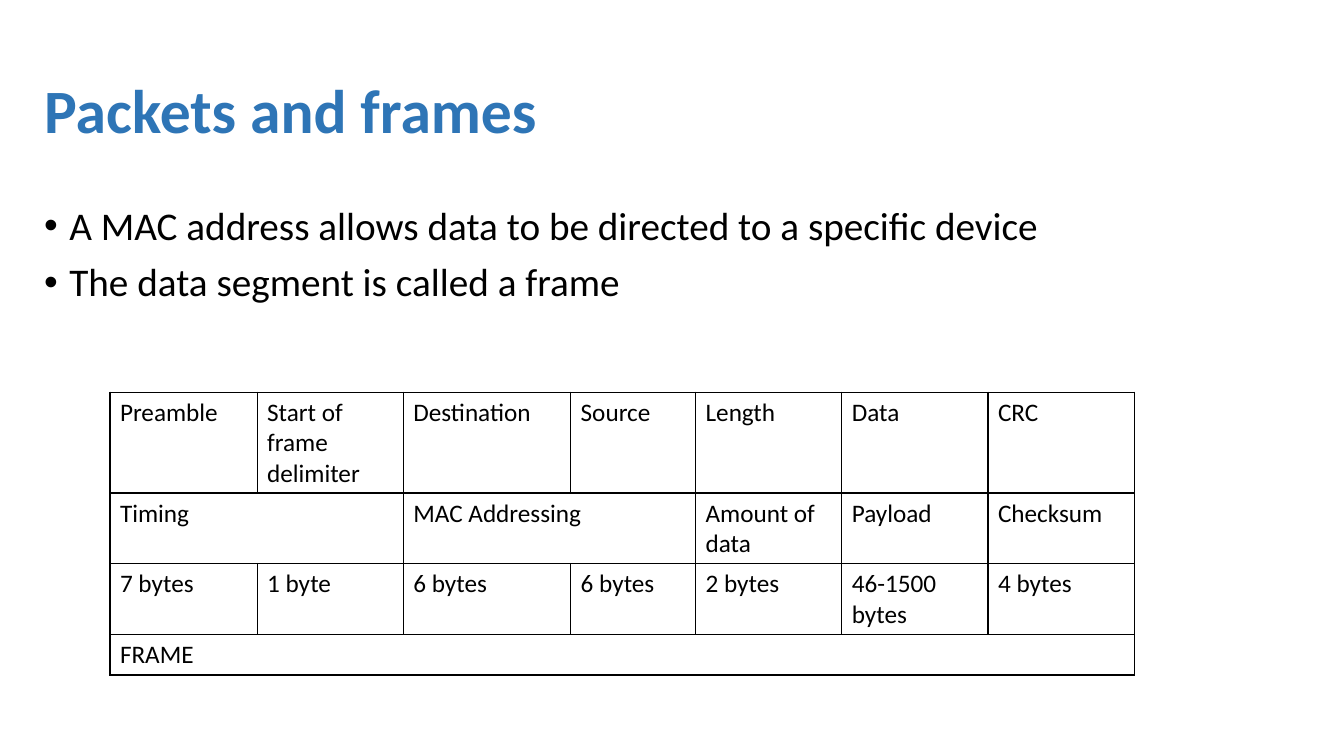
from lxml import etree
from pptx import Presentation
from pptx.dml.color import RGBColor
from pptx.enum.text import MSO_ANCHOR
from pptx.oxml.ns import qn
from pptx.util import Inches, Pt

MIDDLE = MSO_ANCHOR.MIDDLE
TOP = MSO_ANCHOR.TOP
WIDE, HIGH = Inches(13.33), Inches(7.5)
FONT = "Calibri"
BLACK, BLUE = "000000", "2E75B6"

LEFT, SPAN = 2.55, 95.12
COLS = [10.95, 10.88, 12.45, 9.3, 10.88, 10.88, 10.88]
ROW = 5.4
POINTS = [
    "A MAC address allows data to be directed to a specific device",
    "The data segment is called a frame",
]
FIELDS = [
    ["Preamble", "Start of frame delimiter", "Destination", "Source",
     "Length", "Data", "CRC"],
    ["Timing", None, "MAC Addressing", None,
     "Amount of data", "Payload", "Checksum"],
    ["7 bytes", "1 byte", "6 bytes", "6 bytes",
     "2 bytes", "46-1500 bytes", "4 bytes"],
    ["FRAME"] + [None] * 6,
]


def across(share):
    return round(WIDE * share / 100)


def down(share):
    return round(HIGH * share / 100)


def paint(font, code):
    font.color.rgb = RGBColor.from_string(code)


def style(para, size, code=BLACK, bold=False):
    for run in para.runs:
        run.font.name = FONT
        run.font.size = Pt(size)
        run.font.bold = bold
        paint(run.font, code)


def add_text(slide, top, height, lines, anchor=TOP):
    box = slide.shapes.add_textbox(
        across(LEFT), down(top), across(SPAN), down(height))
    frame = box.text_frame
    frame.word_wrap = True
    frame.vertical_anchor = anchor
    frame.text = "\n".join(lines)
    for para in frame.paragraphs:
        para.line_spacing = 0.9
    return frame.paragraphs


def add_bullet(para):
    props = para._p.get_or_add_pPr()
    props.set("marL", str(Inches(0.25)))
    props.set("indent", str(-Inches(0.25)))
    tint = etree.SubElement(props, qn("a:buClr"))
    etree.SubElement(tint, qn("a:srgbClr"), val=BLACK)
    etree.SubElement(props, qn("a:buFont"), typeface="Arial")
    etree.SubElement(props, qn("a:buChar"), char="•")


def add_rules(cell):
    props = cell._tc.get_or_add_tcPr()
    for side in "LRTB":
        line = etree.SubElement(props, qn("a:ln" + side), w=str(Pt(1)))
        fill = etree.SubElement(line, qn("a:solidFill"))
        etree.SubElement(fill, qn("a:srgbClr"), val=BLACK)


def merge_gaps(table, row, texts):
    start = 0
    for col in range(1, len(texts) + 1):
        if col == len(texts) or texts[col] is not None:
            if col - start > 1:
                table.cell(row, start).merge(table.cell(row, col - 1))
            start = col


def add_grid(slide, left, top, rows):
    table = slide.shapes.add_table(
        len(rows), len(COLS), across(left), down(top),
        across(sum(COLS)), down(ROW * len(rows))).table
    table.first_row = False
    table.horz_banding = False
    for col, share in zip(table.columns, COLS):
        col.width = across(share)
    for r, texts in enumerate(rows):
        table.rows[r].height = down(ROW)
        for c, text in enumerate(texts):
            cell = table.cell(r, c)
            add_rules(cell)
            cell.fill.background()
            if text is not None:
                cell.text_frame.text = text
                style(cell.text_frame.paragraphs[0], 18)
        merge_gaps(table, r, texts)


def main():
    deck = Presentation()
    deck.slide_width, deck.slide_height = WIDE, HIGH
    slide = deck.slides.add_slide(deck.slide_layouts[6])
    title = add_text(slide, 5.33, 19.33, ["Packets and frames"], MIDDLE)
    style(title[0], 44, BLUE, True)
    for i, para in enumerate(add_text(slide, 26.67, 72, POINTS)):
        para.space_before = Pt(10 if i else 0)
        add_bullet(para)
        style(para, 28)
    add_grid(slide, 8.18, 51.87, FIELDS)
    deck.save("out.pptx")


if __name__ == "__main__":
    main()
